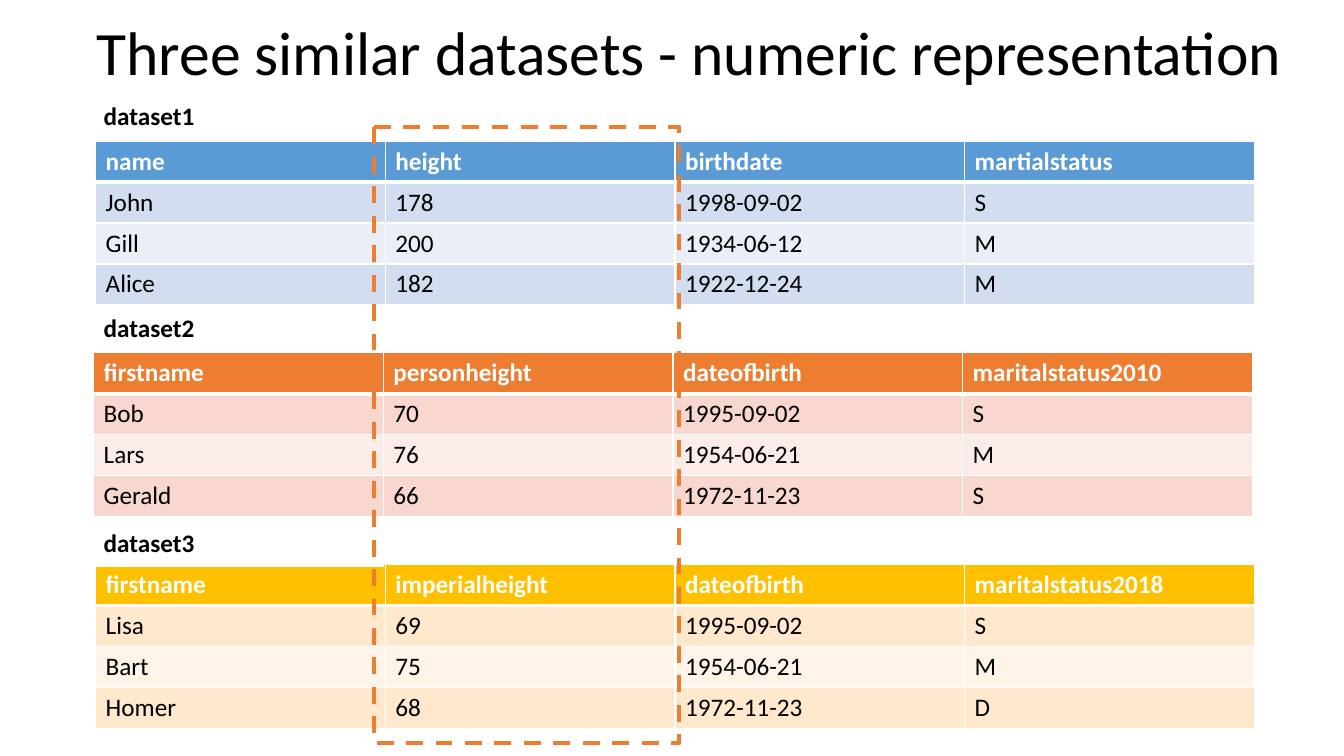
import pptx
import pptx.util
import pptx.dml.color
import pptx.enum.dml
import pptx.enum.shapes
import pptx.enum.text
import lxml.etree

Cm, Pt = pptx.util.Cm, pptx.util.Pt

TITLE = "Three similar datasets - numeric representation"
COLORS = {
    "white": "FFFFFF", "black": "000000", "highlight": "ED7D31",
    "blue": "5B9BD5", "blue_dark": "D2DEEF", "blue_light": "EAEFF7",
    "orange": "ED7D31", "orange_dark": "F8D7CE", "orange_light": "FCECE8",
    "gold": "FFC000", "gold_dark": "FFE8CC", "gold_light": "FFF4E7",
}
DATASETS = [
    {"label": "dataset1", "label_top": 2.44, "left": 2.41, "top": 3.56, "color": "blue", "rows": [
        ("name", "height", "birthdate", "martialstatus"),
        ("John", "178", "1998-09-02", "S"),
        ("Gill", "200", "1934-06-12", "M"),
        ("Alice", "182", "1922-12-24", "M")]},
    {"label": "dataset2", "label_top": 7.77, "left": 2.36, "top": 8.89, "color": "orange", "rows": [
        ("firstname", "personheight", "dateofbirth", "maritalstatus2010"),
        ("Bob", "70", "1995-09-02", "S"),
        ("Lars", "76", "1954-06-21", "M"),
        ("Gerald", "66", "1972-11-23", "S")]},
    {"label": "dataset3", "label_top": 13.2, "left": 2.41, "top": 14.23, "color": "gold", "rows": [
        ("firstname", "imperialheight", "dateofbirth", "maritalstatus2018"),
        ("Lisa", "69", "1995-09-02", "S"),
        ("Bart", "75", "1954-06-21", "M"),
        ("Homer", "68", "1972-11-23", "D")]},
]
LABEL_LEFT = 2.36
COL_WIDTH, ROW_HEIGHT = 7.3, 1.03
HEIGHT_BOX = (9.42, 3.2, 7.7, 15.52)


def rgb(name):
    return pptx.dml.color.RGBColor.from_string(COLORS[name])


def set_font(p, size, color, bold=False):
    p.font.name = "Calibri"
    p.font.size = Pt(size)
    p.font.bold = bold
    p.font.color.rgb = rgb(color)


def set_borders(cell, bottom):
    ns = "http://schemas.openxmlformats.org/drawingml/2006/main"
    tc_pr = cell._tc.get_or_add_tcPr()
    for side, width in (("lnL", 1), ("lnR", 1), ("lnT", 1), ("lnB", bottom)):
        ln = lxml.etree.SubElement(tc_pr, f"{{{ns}}}{side}", w=str(Pt(width)))
        fill = lxml.etree.SubElement(ln, f"{{{ns}}}solidFill")
        lxml.etree.SubElement(fill, f"{{{ns}}}srgbClr", val=COLORS["white"])


def add_grid(slide, rows, left, top, color=None):
    cols = len(rows[0])
    table = slide.shapes.add_table(
        len(rows), cols, Cm(left), Cm(top),
        Cm(COL_WIDTH * cols), Cm(ROW_HEIGHT * len(rows))).table
    table.first_row = table.horz_banding = False
    for i, row in enumerate(rows):
        for j, text in enumerate(row):
            cell = table.cell(i, j)
            cell.text = text
            header = i == 0
            set_borders(cell, 3 if header else 1)
            if color is None:
                cell.fill.background()
            else:
                shade = color if header else color + ("_dark" if i % 2 else "_light")
                cell.fill.solid()
                cell.fill.fore_color.rgb = rgb(shade)
            set_font(cell.text_frame.paragraphs[0], 18,
                     "white" if header and color else "black", header)


def main():
    prs = pptx.Presentation()
    prs.slide_width, prs.slide_height = Cm(33.87), Cm(19.05)
    slide = prs.slides.add_slide(prs.slide_layouts[5])

    title = slide.shapes.title
    title.left, title.top, title.width, title.height = Cm(2.18), Cm(-0.43), Cm(31.17), Cm(3.68)
    tf = title.text_frame
    tf.text = TITLE
    tf.word_wrap = True
    tf.auto_size = pptx.enum.text.MSO_AUTO_SIZE.NONE
    tf.vertical_anchor = pptx.enum.text.MSO_ANCHOR.MIDDLE
    p = tf.paragraphs[0]
    p.alignment = pptx.enum.text.PP_ALIGN.LEFT
    p.line_spacing = 0.9
    set_font(p, 44, "black")

    for d in DATASETS:
        add_grid(slide, d["rows"], d["left"], d["top"], d["color"])
        add_grid(slide, [(d["label"],)], LABEL_LEFT, d["label_top"])

    sp = slide.shapes.add_shape(
        pptx.enum.shapes.MSO_SHAPE.ROUNDED_RECTANGLE, *map(Cm, HEIGHT_BOX))
    sp.adjustments[0] = 0
    sp.shadow.inherit = False
    sp.fill.background()
    sp.line.color.rgb = rgb("highlight")
    sp.line.width = Pt(3)
    sp.line.dash_style = pptx.enum.dml.MSO_LINE.DASH

    prs.save("out.pptx")


if __name__ == "__main__":
    main()
